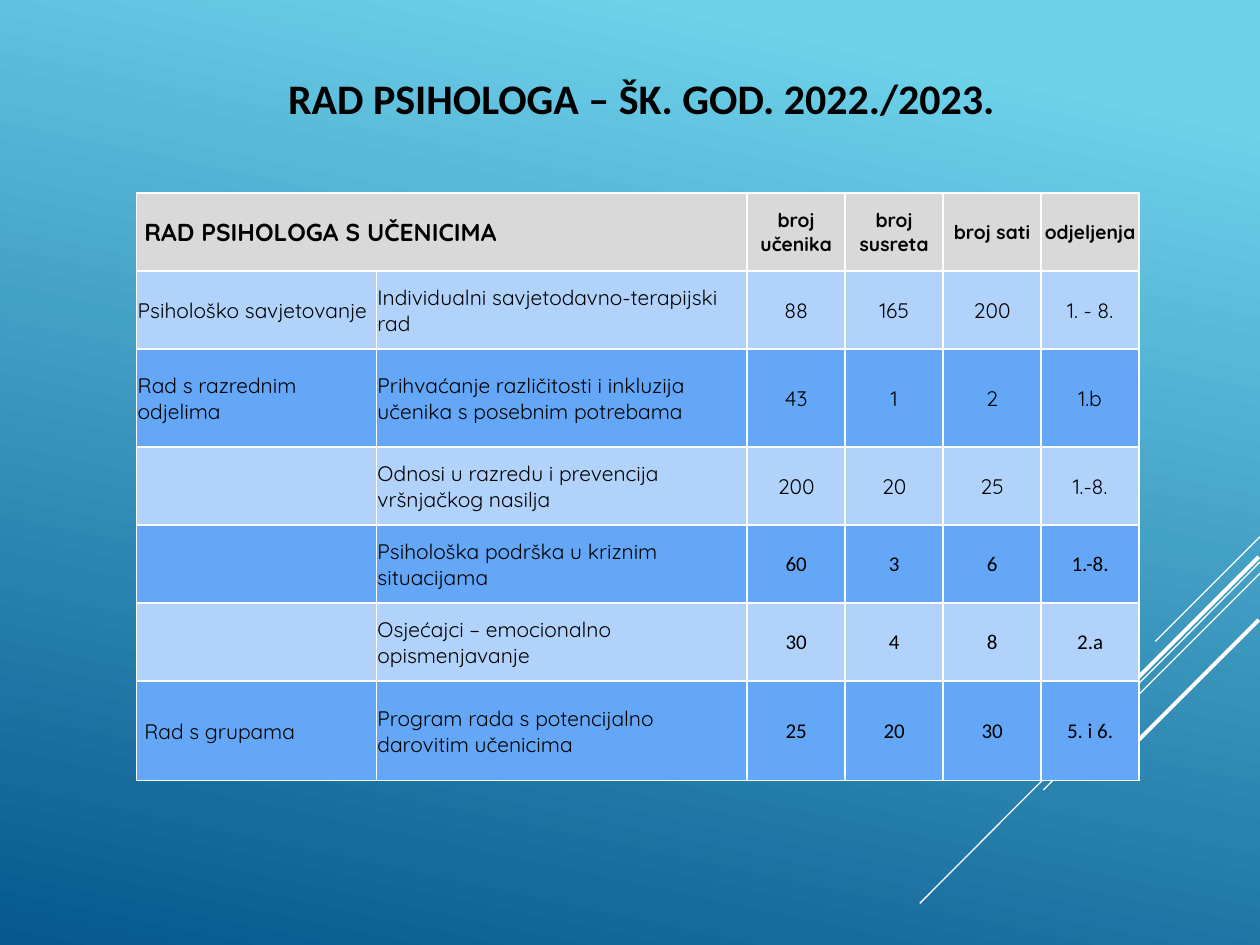
"""Build the slide that tabulates the school psychologist's work in 2022/2023."""
from lxml.etree import SubElement
from pptx import Presentation
from pptx.dml.color import RGBColor
from pptx.enum.shapes import MSO_CONNECTOR
from pptx.enum.text import MSO_ANCHOR, PP_ALIGN
from pptx.oxml import parse_xml
from pptx.oxml.ns import nsdecls, qn
from pptx.util import Pt

COLOURS = {
    "sky": "6ED2EB",
    "deep": "06588E",
    "white": "FFFFFF",
    "black": "000000",
    "header": "D9D9D9",
    "light": "B1D3FB",
    "strong": "64A7F7",
}


def colour(name):
    return RGBColor.from_string(COLOURS[name])


def add_run(para, text, font_name, size, bold):
    span = para.add_run()
    span.text = text
    span.font.name = font_name
    span.font.size = Pt(size)
    span.font.bold = bold
    span.font.color.rgb = colour("black")


deck = Presentation()
deck.slide_width, deck.slide_height = Pt(720), Pt(540)
page = deck.slides.add_slide(deck.slide_layouts[6])

backdrop = page.background.fill
backdrop.gradient()
backdrop.gradient_angle = 258
for stop, name, position in zip(backdrop.gradient_stops, ("sky", "deep"), (0.1, 1)):
    stop.color.rgb = colour(name)
    stop.position = position

diagonals = [
    (720, 306.7, 660.2, 366.5, 0.75),
    (720, 321.1, 525.6, 516.2, 0.75),
    (720, 327.6, 596.2, 451.4, 0.75),
    (719.3, 318.2, 606.2, 431.3, 2.25),
    (719.3, 354.2, 637.2, 436.3, 2.25),
]
for start_x, start_y, end_x, end_y, weight in diagonals:
    diagonal = page.shapes.add_connector(
        MSO_CONNECTOR.STRAIGHT, Pt(start_x), Pt(start_y), Pt(end_x), Pt(end_y)
    )
    diagonal.line.color.rgb = colour("white")
    diagonal.line.width = Pt(weight)
    SubElement(diagonal._element.spPr, qn("a:effectLst"))

rows = [
    ["RAD PSIHOLOGA S UČENICIMA", "", "broj učenika", "broj susreta", "broj sati", "odjeljenja"],
    ["Psihološko savjetovanje", "Individualni savjetodavno-terapijski rad", "88", "165", "200", "1. - 8."],
    ["Rad s razrednim odjelima", "Prihvaćanje različitosti i inkluzija učenika s posebnim potrebama",
     "43", "1", "2", "1.b"],
    ["", "Odnosi u razredu i prevencija vršnjačkog nasilja", "200", "20", "25", "1.-8."],
    ["", "Psihološka podrška u kriznim situacijama", "60", "3", "6", "1.-8."],
    ["", "Osjećajci – emocionalno opismenjavanje", "30", "4", "8", "2.a"],
    ["Rad s grupama", "Program rada s potencijalno darovitim učenicima", "25", "20", "30", "5. i 6."],
]
column_widths = [137, 212] + [56] * 4
row_heights = [44.6, 44.6, 56, 44.6, 44.6, 44.6, 57]
indented = ("RAD PSIHOLOGA S UČENICIMA", "Rad s grupama")

frame = page.shapes.add_table(
    len(rows), len(column_widths), Pt(78), Pt(110.2), Pt(sum(column_widths)), Pt(sum(row_heights))
)
table = frame.table
for column, width in zip(table.columns, column_widths):
    column.width = Pt(width)
for row, height in zip(table.rows, row_heights):
    row.height = Pt(height)
table.cell(0, 0).merge(table.cell(0, 1))

for row_index, texts in enumerate(rows):
    is_header = row_index == 0
    fill_name = "header" if is_header else ("strong", "light")[row_index % 2]
    for column_index, text in enumerate(texts):
        is_count = column_index >= 2
        cell = table.cell(row_index, column_index)
        cell.vertical_anchor = MSO_ANCHOR.MIDDLE
        cell.margin_left = Pt(4.5 if text in indented else 0.7)
        cell.margin_right = cell.margin_top = Pt(0.7)
        cell.margin_bottom = Pt(0)
        properties = cell._tc.get_or_add_tcPr()
        for side in "LRTB":
            properties.append(parse_xml(
                f'<a:ln{side} {nsdecls("a")} w="12700"><a:solidFill>'
                f'<a:srgbClr val="{COLOURS["white"]}"/></a:solidFill></a:ln{side}>'
            ))
        cell.fill.solid()
        cell.fill.fore_color.rgb = colour(fill_name)
        if text:
            para = cell.text_frame.paragraphs[0]
            para.alignment = PP_ALIGN.CENTER if is_count else PP_ALIGN.LEFT
            font_name = "Calibri" if is_count and row_index >= 4 else "Quicksand"
            size = (11 if is_count else 14) if is_header else 12
            add_run(para, text, font_name, size, is_header)

box = page.shapes.add_textbox(Pt(123.5), Pt(43.2), Pt(486), Pt(25.2))
box.text_frame.word_wrap = True
box.text_frame.vertical_anchor = MSO_ANCHOR.MIDDLE
title = box.text_frame.paragraphs[0]
title.alignment = PP_ALIGN.CENTER
add_run(title, "RAD PSIHOLOGA – ŠK. GOD. 2022./2023.", "Calibri", 24, True)

deck.save("out.pptx")
